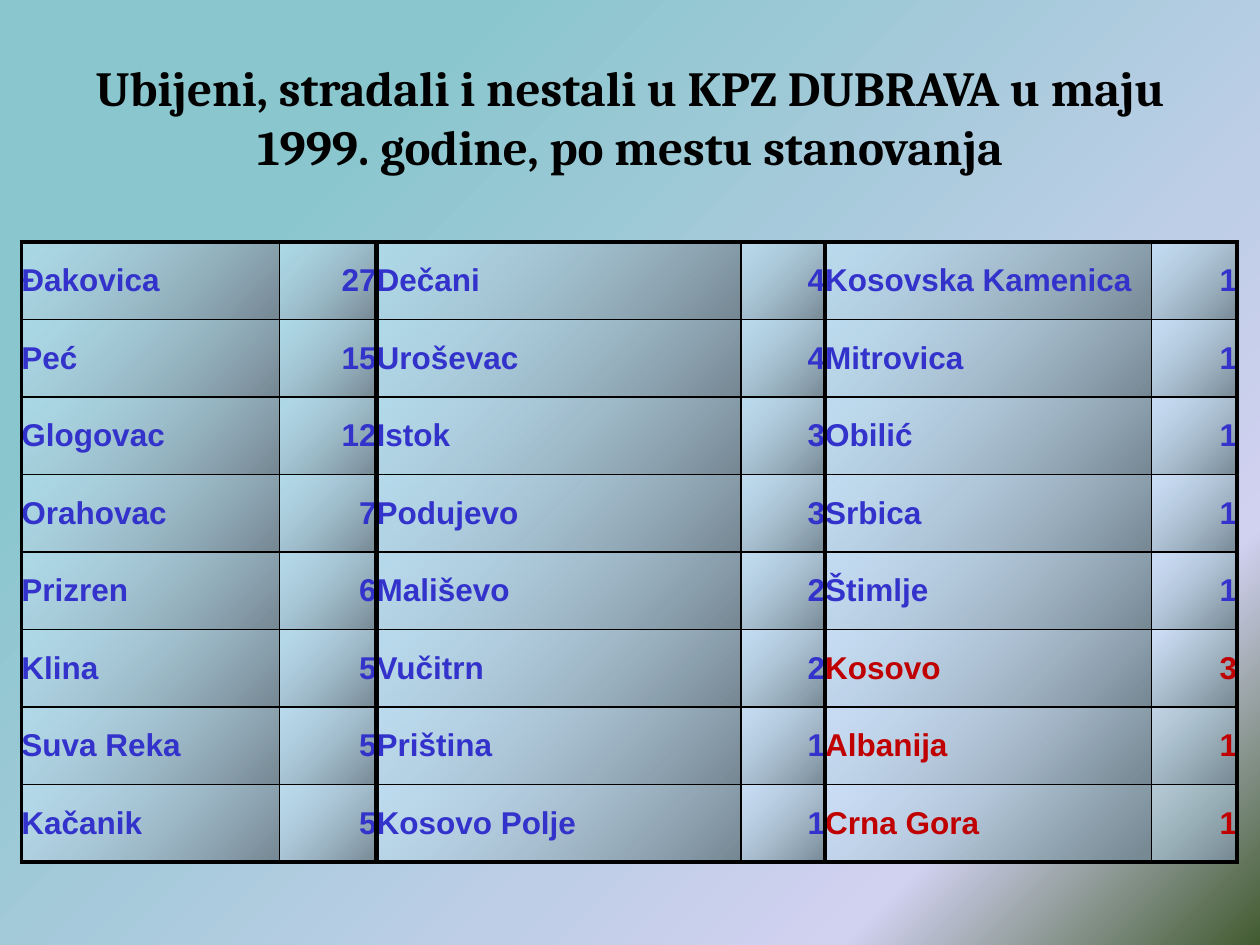
from typing import NamedTuple

from lxml import etree
from pptx import Presentation
from pptx.dml.color import RGBColor
from pptx.enum.text import MSO_ANCHOR, PP_ALIGN
from pptx.oxml.ns import qn
from pptx.util import Inches, Pt

LEFT, CENTER, RIGHT = PP_ALIGN.LEFT, PP_ALIGN.CENTER, PP_ALIGN.RIGHT
MIDDLE = MSO_ANCHOR.MIDDLE

BLACK, BLUE, RED = "000000", "3333CC", "C00000"
INNER, GROUP, OUTER = 1, 3, 2.25  # border widths in points


class Stop(NamedTuple):
    pos: int
    color: str
    alpha: int = 100


class Place(NamedTuple):
    name: str
    count: int
    color: str = BLUE


BACKGROUND = [Stop(22, "8AC6CD"), Stop(81, "D1D1F0", 91), Stop(100, "425B30")]
CELL_FILL = [Stop(0, "CCECFF", 50), Stop(100, "758792")]
TITLE_FORMAT = {"name": "Cambria", "size": Pt(28), "bold": True}
CELL_FORMAT = {"name": "Arial", "size": Pt(18), "bold": True}
COL_WIDTHS = [2.05, 0.77, 2.89, 0.67, 2.59, 0.68]

# Each group fills one pair of columns
GROUPS = [
    [Place("Đakovica", 27), Place("Peć", 15), Place("Glogovac", 12),
     Place("Orahovac", 7), Place("Prizren", 6), Place("Klina", 5),
     Place("Suva Reka", 5), Place("Kačanik", 5)],
    [Place("Dečani", 4), Place("Uroševac", 4), Place("Istok", 3),
     Place("Podujevo", 3), Place("Mališevo", 2), Place("Vučitrn", 2),
     Place("Priština", 1), Place("Kosovo Polje", 1)],
    [Place("Kosovska Kamenica", 1), Place("Mitrovica", 1), Place("Obilić", 1),
     Place("Srbica", 1), Place("Štimlje", 1), Place("Kosovo", 3, RED),
     Place("Albanija", 1, RED), Place("Crna Gora", 1, RED)],
]
ROWS, COLS = len(GROUPS[0]), len(COL_WIDTHS)


def rgb(color: str) -> RGBColor:
    return RGBColor.from_string(color)


def gradient(stops: list[Stop]) -> etree._Element:
    """Diagonal linear gradient, with opacity per stop."""
    grad = etree.Element(qn("a:gradFill"), rotWithShape="1")
    gs_list = etree.SubElement(grad, qn("a:gsLst"))
    for stop in stops:
        gs = etree.SubElement(gs_list, qn("a:gs"), pos=str(stop.pos * 1000))
        clr = etree.SubElement(gs, qn("a:srgbClr"), val=stop.color)
        if stop.alpha < 100:
            etree.SubElement(clr, qn("a:alpha"), val=str(stop.alpha * 1000))
    etree.SubElement(grad, qn("a:lin"), ang=str(45 * 60000), scaled="0")
    return grad


def write(tf, text: str, fmt: dict, color: str, align) -> None:
    p = tf.paragraphs[0]
    p.alignment = align
    r = p.add_run()
    r.text = text
    for key, value in fmt.items():
        setattr(r.font, key, value)
    r.font.color.rgb = rgb(color)


def border_widths(row: int, col: int) -> dict[str, float]:
    """Thick frame outside, thicker rules between groups, thin rules inside."""
    def side(edge: int) -> float:
        if edge in (0, COLS):
            return OUTER
        return INNER if edge % 2 else GROUP

    return {
        "a:lnL": side(col),
        "a:lnR": side(col + 1),
        "a:lnT": OUTER if row == 0 else INNER,
        "a:lnB": OUTER if row == ROWS - 1 else INNER,
    }


def draw_cell(table, row: int, col: int, text: str, color: str, align) -> None:
    cell = table.cell(row, col)
    cell.vertical_anchor = MIDDLE
    for side in ("left", "top", "right", "bottom"):
        setattr(cell, f"margin_{side}", 0)
    write(cell.text_frame, text, CELL_FORMAT, color, align)
    tc_pr = cell._tc.get_or_add_tcPr()
    for tag, width in border_widths(row, col).items():
        ln = etree.SubElement(tc_pr, qn(tag), w=str(Pt(width)))
        fill = etree.SubElement(ln, qn("a:solidFill"))
        etree.SubElement(fill, qn("a:srgbClr"), val=BLACK)
    tc_pr.append(gradient(CELL_FILL))


def draw_background(s) -> None:
    s.background.fill.solid()
    bg_pr = s.element.find(f".//{qn('p:bgPr')}")
    bg_pr.replace(bg_pr.find(qn("a:solidFill")), gradient(BACKGROUND))


def draw_title(s, text: str) -> None:
    sp = s.shapes.add_textbox(Inches(0.5), Inches(0.3), Inches(9), Inches(1.25))
    tf = sp.text_frame
    tf.word_wrap = True
    tf.vertical_anchor = MIDDLE
    write(tf, text, TITLE_FORMAT, BLACK, CENTER)


def draw_table(s) -> None:
    frame = s.shapes.add_table(ROWS, COLS, Inches(0.17), Inches(1.92),
                               Inches(sum(COL_WIDTHS)), Inches(4.92))
    table = frame.table
    table.first_row = table.horz_banding = False
    for column, width in zip(table.columns, COL_WIDTHS):
        column.width = Inches(width)
    for g, group in enumerate(GROUPS):
        for row, place in enumerate(group):
            draw_cell(table, row, 2 * g, place.name, place.color, LEFT)
            draw_cell(table, row, 2 * g + 1, str(place.count), place.color, RIGHT)


def main() -> None:
    prs = Presentation()
    prs.slide_width, prs.slide_height = Inches(10), Inches(7.5)
    s = prs.slides.add_slide(prs.slide_layouts[6])
    draw_background(s)
    draw_title(s, "Ubijeni, stradali i nestali u KPZ DUBRAVA u maju 1999. godine, "
                  "po mestu stanovanja")
    draw_table(s)
    prs.save("out.pptx")


if __name__ == "__main__":
    main()
